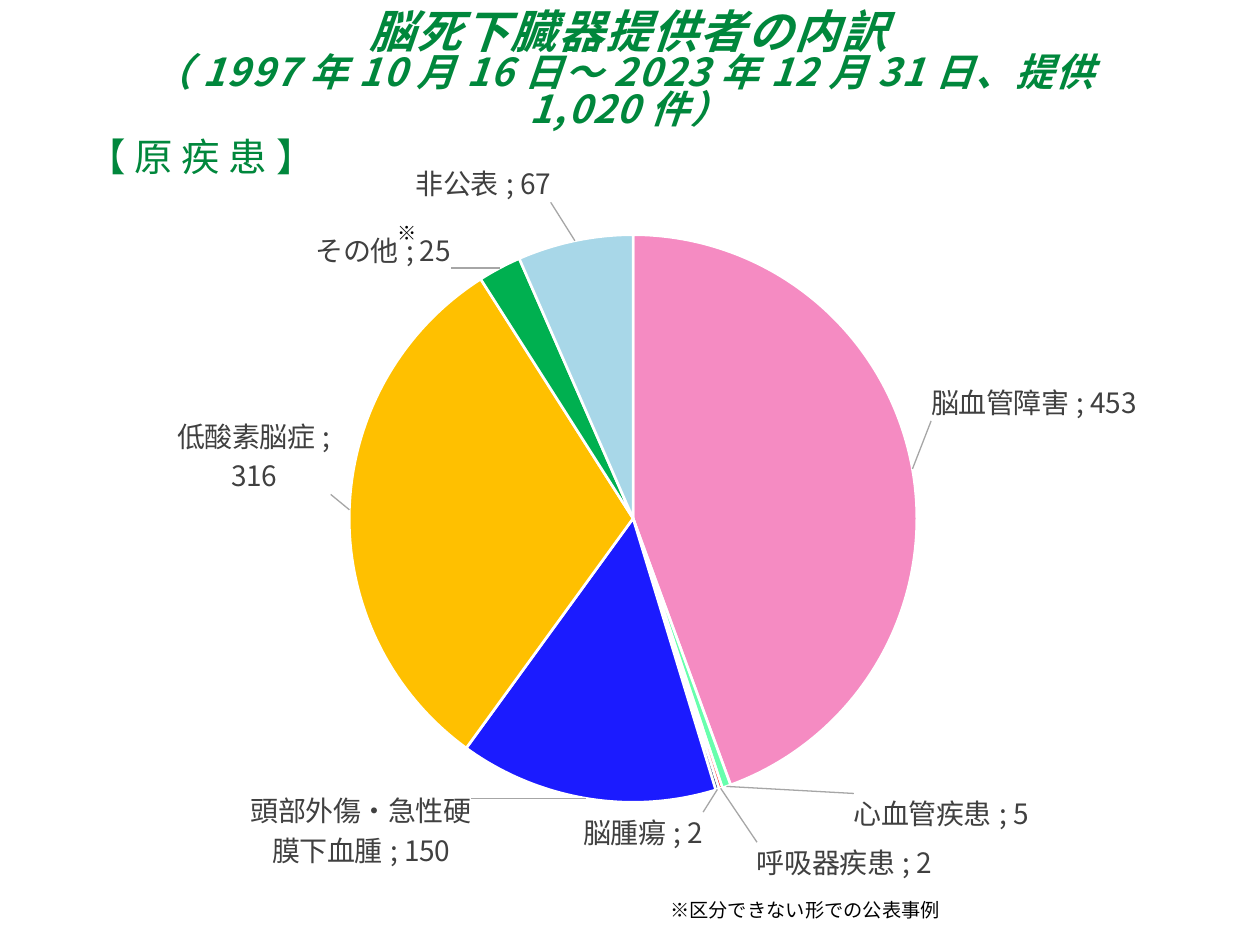
from pptx import Presentation
from pptx.chart.data import CategoryChartData
from pptx.dml.color import RGBColor
from pptx.enum.chart import XL_CHART_TYPE, XL_LABEL_POSITION
from pptx.enum.text import MSO_ANCHOR, PP_ALIGN
from pptx.oxml import parse_xml
from pptx.oxml.ns import nsdecls, qn
from pptx.util import Inches, Pt

PIE = XL_CHART_TYPE.PIE
OUTSIDE_END = XL_LABEL_POSITION.OUTSIDE_END
MIDDLE = MSO_ANCHOR.MIDDLE
CENTER = PP_ALIGN.CENTER

GREEN = RGBColor(0x00, 0x87, 0x3C)
BLACK = RGBColor(0x00, 0x00, 0x00)
WHITE = RGBColor(0xFF, 0xFF, 0xFF)
LABEL_GRAY = RGBColor(0x40, 0x40, 0x40)
LEADER_GRAY = RGBColor(0xA6, 0xA6, 0xA6)
FONT = "Noto Sans CJK JP"

# disease, donors, slice colour, label shift as a share of the chart's width and height
DISEASES = [
    ("脳血管障害", 453, RGBColor(0xF5, 0x8B, 0xC2), (0.01, -0.06)),
    ("心血管疾患", 5, RGBColor(0x67, 0xFF, 0xAD), (0.11, 0)),
    ("呼吸器疾患", 2, RGBColor(0xFF, 0x00, 0x00), (0.03, 0.06)),
    ("脳腫瘍", 2, RGBColor(0x00, 0x20, 0x60), (-0.12, 0.02)),
    ("頭部外傷・急性硬膜下血腫", 150, RGBColor(0x1B, 0x1B, 0xFF), (-0.1, -0.02)),
    ("低酸素脳症", 316, RGBColor(0xFF, 0xC0, 0x00), (-0.01, -0.07)),
    ("その他", 25, RGBColor(0x00, 0xB0, 0x50), (-0.04, 0.01)),
    ("非公表", 67, RGBColor(0xA8, 0xD7, 0xE8), (-0.02, -0.04)),
]
WRAPPED_LABEL = 4
WRAPPED_SIZE = (0.2, 0.11)


def style_font(font, size, color, name=FONT):
    font.size, font.name = Pt(size), name
    font.color.rgb = color


def add_text(page, box, text, size, color, name=FONT, wrap=True):
    frame = page.shapes.add_textbox(*map(Inches, box)).text_frame
    frame.word_wrap = wrap
    frame.text = text
    for span in frame.paragraphs[0].runs:
        style_font(span.font, size, color, name)
        span.font._element.append(
            parse_xml(f'<a:ea {nsdecls("a")} typeface="{FONT}"/>'))
    return frame


def add_title(page, box):
    frame = add_text(
        page, box,
        "脳死下臓器提供者の内訳\v（1997年10月16日～2023年12月31日、提供1,020件）",
        22, GREEN)
    frame.vertical_anchor = MIDDLE
    para = frame.paragraphs[0]
    para.alignment, para.line_spacing = CENTER, 0.8
    for span in para.runs:
        span.font.bold = span.font.italic = True
        span.font._element.set("spc", "100")
    para.runs[0].font.size = Pt(26)


def manual_layout(x, y, inner=False, size=None):
    """Return a c:layout element, with a size when one is given."""
    target = '<c:layoutTarget val="inner"/>' if inner else ""
    modes = '<c:xMode val="edge"/><c:yMode val="edge"/>' if inner else ""
    extent = f'<c:w val="{size[0]}"/><c:h val="{size[1]}"/>' if size else ""
    return parse_xml(
        f'<c:layout {nsdecls("c")}><c:manualLayout>{target}{modes}'
        f'<c:x val="{x}"/><c:y val="{y}"/>{extent}</c:manualLayout></c:layout>')


def separator():
    return parse_xml(f'<c:separator {nsdecls("c")}>; </c:separator>')


def label_size_extension(size):
    """Return the chart extension that fixes the width and height of a label."""
    return parse_xml(
        f'<c:extLst {nsdecls("c")}><c:ext uri="{{CE6537A1-D6FC-4f65-9D91-7224C49458BB}}" '
        'xmlns:c15="http://schemas.microsoft.com/office/drawing/2012/chart">'
        f'<c15:layout><c:manualLayout><c:w val="{size[0]}"/><c:h val="{size[1]}"/>'
        '</c:manualLayout></c15:layout></c:ext></c:extLst>')


def style_labels(series):
    labels = series.data_labels
    labels.show_value = labels.show_category_name = True
    labels.position = OUTSIDE_END
    style_font(labels.font, 16, LABEL_GRAY)
    group = labels._element
    for old in group.findall(qn("c:showLeaderLines")):
        group.remove(old)
    group.append(separator())
    group.append(parse_xml(f'<c:showLeaderLines {nsdecls("c")} val="1"/>'))
    group.append(parse_xml(
        f'<c:leaderLines {nsdecls("c", "a")}><c:spPr><a:ln w="9525"><a:solidFill>'
        f'<a:srgbClr val="{LEADER_GRAY}"/></a:solidFill></a:ln></c:spPr></c:leaderLines>'))

    for index, (_, _, _, shift) in enumerate(DISEASES):
        label = series.points[index].data_label
        label.position = OUTSIDE_END
        style_font(label.font, 16, LABEL_GRAY)
        node = group.findall(qn("c:dLbl"))[index]
        node.find(qn("c:idx")).addnext(manual_layout(*shift))
        node.find(qn("c:showCatName")).set("val", "1")
        node.append(separator())
        if index == WRAPPED_LABEL:
            node.append(label_size_extension(WRAPPED_SIZE))


def add_disease_pie(page, box):
    data = CategoryChartData()
    data.categories = [name for name, *_ in DISEASES]
    data.add_series("Series 1", [count for _, count, *_ in DISEASES])
    chart = page.shapes.add_chart(PIE, *map(Inches, box), data).chart
    chart.has_legend = chart.has_title = False
    style_font(chart.font, 10, BLACK)
    plot = chart.plots[0]
    plot.vary_by_categories = True

    area = chart._chartSpace.chart.plotArea
    for old in area.findall(qn("c:layout")):
        area.remove(old)
    area.insert(0, manual_layout(0.21, 0.14, inner=True, size=(0.5, 0.73)))

    series = plot.series[0]
    for index, (_, _, color, _) in enumerate(DISEASES):
        slice_format = series.points[index].format
        slice_format.fill.solid()
        slice_format.fill.fore_color.rgb = color
        slice_format.line.color.rgb = WHITE
        slice_format.line.width = Pt(1.5)
    style_labels(series)


def main():
    deck = Presentation()
    deck.slide_width, deck.slide_height = Inches(10), Inches(7.5)
    page = deck.slides.add_slide(deck.slide_layouts[6])
    add_disease_pie(page, (0.88, 0.99, 9.01, 6.19))
    add_title(page, (1.01, 0.14, 7.97, 0.87))
    add_text(page, (0.6, 1.01, 2, 0.47), "【 原 疾 患 】", 22, GREEN, "Arial")
    add_text(page, (5.22, 7.08, 2.36, 0.29), "※区分できない形での公表事例",
             11, BLACK, wrap=False)
    add_text(page, (3.06, 1.71, 0.36, 0.29), "※", 11, BLACK, wrap=False)
    deck.save("out.pptx")


if __name__ == "__main__":
    main()
